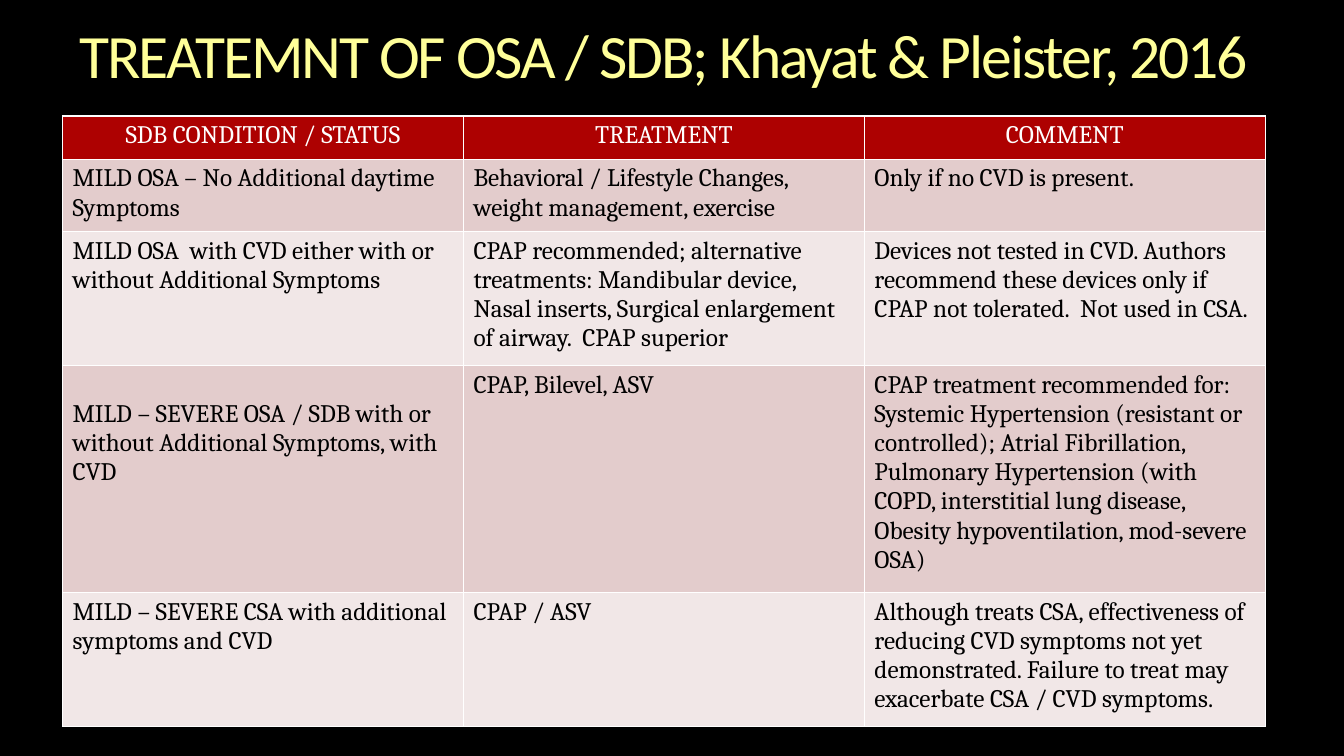
from lxml.etree import SubElement
from pptx import Presentation
from pptx.dml.color import RGBColor
from pptx.enum.text import MSO_ANCHOR, MSO_AUTO_SIZE, PP_ALIGN
from pptx.oxml.ns import qn
from pptx.util import Inches, Pt

BLACK = RGBColor(0x00, 0x00, 0x00)
WHITE = RGBColor(0xFF, 0xFF, 0xFF)
YELLOW = RGBColor(0xFF, 0xFF, 0x99)
RED = RGBColor(0xAD, 0x01, 0x01)
ROSE = RGBColor(0xE3, 0xCC, 0xCC)
PALE_ROSE = RGBColor(0xF1, 0xE7, 0xE7)

HEADINGS = ["SDB CONDITION / STATUS", "TREATMENT", "COMMENT"]
TREATMENTS = [
    ["MILD OSA – No Additional daytime Symptoms",
     "Behavioral / Lifestyle Changes, weight management, exercise",
     "Only if no CVD is present."],
    ["MILD OSA  with CVD either with or without Additional Symptoms",
     "CPAP recommended; alternative treatments: Mandibular device, Nasal inserts, "
     "Surgical enlargement of airway.  CPAP superior",
     "Devices not tested in CVD. Authors recommend these devices only if "
     "CPAP not tolerated.  Not used in CSA."],
    ["MILD – SEVERE OSA / SDB with or without Additional Symptoms, with CVD",
     "CPAP, Bilevel, ASV",
     "CPAP treatment recommended for:\n"
     "Systemic Hypertension (resistant or controlled); Atrial Fibrillation, "
     "Pulmonary Hypertension (with COPD, interstitial lung disease, "
     "Obesity hypoventilation, mod-severe OSA)"],
    ["MILD – SEVERE CSA with additional symptoms and CVD",
     "CPAP / ASV",
     "Although treats CSA, effectiveness of reducing CVD symptoms not yet "
     "demonstrated. Failure to treat may exacerbate CSA / CVD symptoms."],
]
ROW_HEIGHTS = [0.43, 0.72, 1.33, 2.25, 1.33]


def add_title(slide, left, top, width, height):
    title = slide.shapes.title
    title.left, title.top, title.width, title.height = left, top, width, height
    frame = title.text_frame
    frame.margin_left = frame.margin_top = frame.margin_right = frame.margin_bottom = 0
    frame.vertical_anchor = MSO_ANCHOR.MIDDLE
    frame.auto_size = MSO_AUTO_SIZE.NONE
    frame.text = "TREATEMNT OF OSA / SDB; Khayat & Pleister, 2016"
    heading = frame.paragraphs[0]
    heading.alignment = PP_ALIGN.LEFT
    heading.line_spacing = 0.9
    heading.font.name = "Calibri"
    heading.font.size = Pt(44)
    heading.font.color.rgb = YELLOW
    heading.runs[0].font._element.set("spc", "-150")


def add_borders(cell):
    properties = cell._tc.get_or_add_tcPr()
    for side in ("a:lnL", "a:lnR", "a:lnT", "a:lnB"):
        line = SubElement(properties, qn(side), w=str(Pt(1)))
        fill = SubElement(line, qn("a:solidFill"))
        SubElement(fill, qn("a:srgbClr"), val=str(WHITE))


def fill_cell(cell, text, background, ink, alignment):
    add_borders(cell)
    cell.fill.solid()
    cell.fill.fore_color.rgb = background
    cell.text = text
    for paragraph in cell.text_frame.paragraphs:
        paragraph.alignment = alignment
        paragraph.font.name = "Cambria"
        paragraph.font.size = Pt(18)
        paragraph.font.bold = False
        paragraph.font.color.rgb = ink


def add_treatment_table(slide, left, top, width, height):
    rows = [HEADINGS] + TREATMENTS
    table = slide.shapes.add_table(
        len(rows), len(HEADINGS), left, top, width, height).table
    table.horz_banding = False
    for column in table.columns:
        column.width = width // len(HEADINGS)
    for r, (texts, row_height) in enumerate(zip(rows, ROW_HEIGHTS)):
        table.rows[r].height = Inches(row_height)
        if r == 0:
            style = RED, WHITE, PP_ALIGN.CENTER
        else:
            style = ROSE if r % 2 else PALE_ROSE, BLACK, PP_ALIGN.LEFT
        for c, text in enumerate(texts):
            fill_cell(table.cell(r, c), text, *style)
    # The third condition starts one line lower than its neighbours
    table.cell(3, 0).margin_top = Inches(0.34)


def main():
    presentation = Presentation()
    presentation.slide_width = Inches(13.33)
    presentation.slide_height = Inches(7.5)
    slide = presentation.slides.add_slide(presentation.slide_layouts[5])
    slide.background.fill.solid()
    slide.background.fill.fore_color.rgb = BLACK
    add_title(slide, Inches(0.79), Inches(0.25), Inches(12), Inches(0.67))
    add_treatment_table(slide, Inches(0.62), Inches(1.15),
                        Inches(11.93), Inches(sum(ROW_HEIGHTS)))
    presentation.save("out.pptx")


if __name__ == "__main__":
    main()
